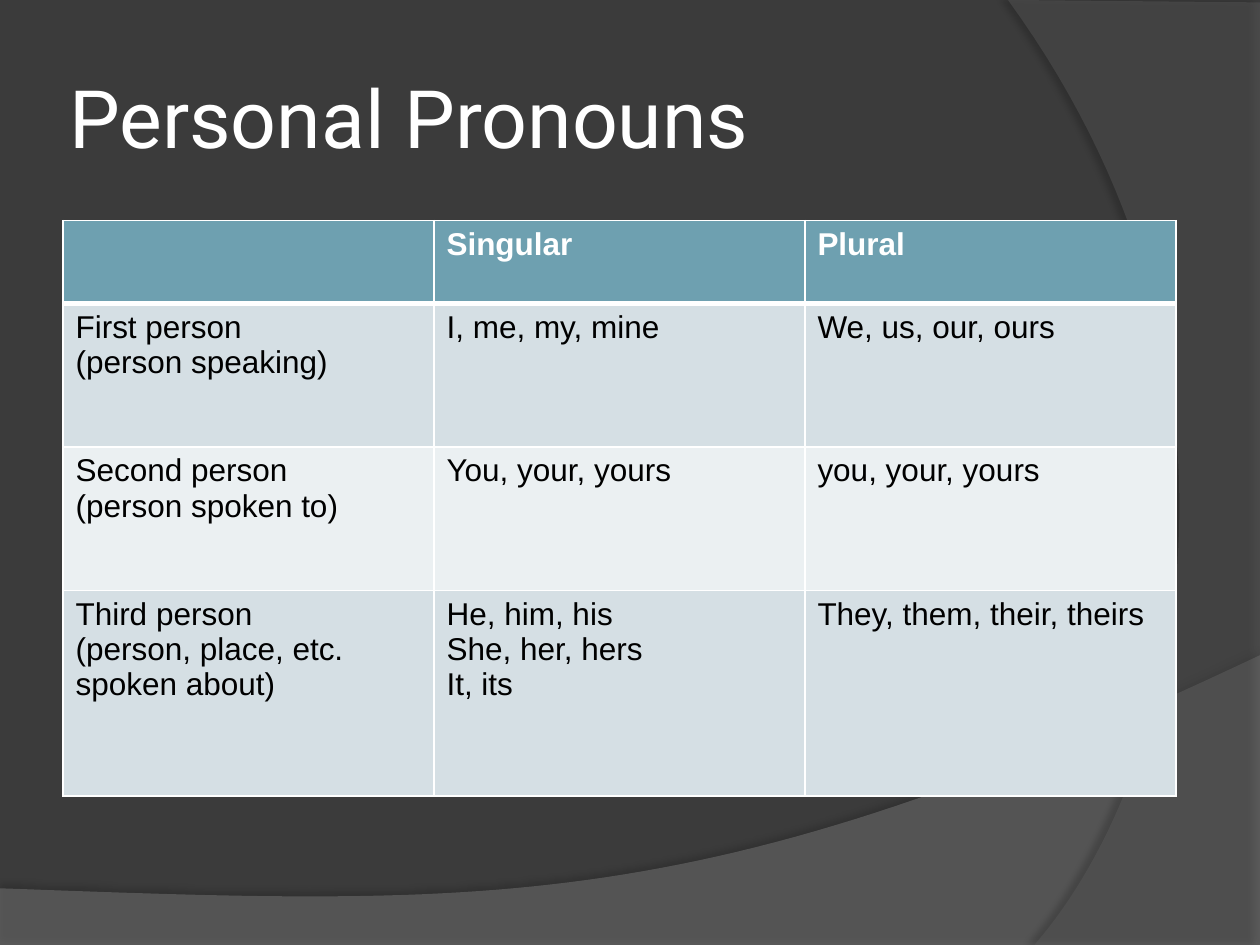
import lxml.etree
import pptx
import pptx.dml.color
import pptx.enum.text
import pptx.oxml.ns
import pptx.util

Pt = pptx.util.Pt
RGBColor = pptx.dml.color.RGBColor
qn = pptx.oxml.ns.qn

BACKGROUND = RGBColor(0x3B, 0x3B, 0x3B)
WAVE = RGBColor(0x7F, 0x7F, 0x7F)
ARC = RGBColor(0x5E, 0x5E, 0x5E)
WHITE = RGBColor(0xFF, 0xFF, 0xFF)
BLACK = RGBColor(0x00, 0x00, 0x00)
HEADER = RGBColor(0x6E, 0xA0, 0xB0)
BANDS = [RGBColor(0xEB, 0xF0, 0xF2), RGBColor(0xD5, 0xDF, 0xE4)]

PRONOUNS = [
    ["", "Singular", "Plural"],
    ["First person\n(person speaking)", "I, me, my, mine", "We, us, our, ours"],
    ["Second person\n(person spoken to)", "You, your, yours", "you, your, yours"],
    ["Third person\n(person, place, etc. spoken about)",
     "He, him, his\nShe, her, hers\nIt, its", "They, them, their, theirs"],
]


def sub(parent, tag, **attrs):
    return lxml.etree.SubElement(parent, qn(tag), {k: str(v) for k, v in attrs.items()})


def bezier(p0, p1, p2, p3, steps=60):
    points = []
    for i in range(steps + 1):
        t = i / steps
        weights = ((1 - t) ** 3, 3 * t * (1 - t) ** 2, 3 * t * t * (1 - t), t ** 3)
        points.append(tuple(sum(w * p[axis] for w, p in zip(weights, (p0, p1, p2, p3)))
                            for axis in (0, 1)))
    return points


class SlideBuilder:
    title_font = "Roboto"
    body_font = "Arial"

    def __init__(self, slide):
        self.slide = slide

    def background(self, color):
        fill = self.slide.background.fill
        fill.solid()
        fill.fore_color.rgb = color

    def swoosh(self, points, color, opacity, shadow_opacity, distance, angle):
        start, *rest = [(Pt(x), Pt(y)) for x, y in points]
        builder = self.slide.shapes.build_freeform(*start)
        builder.add_line_segments(rest, close=True)
        sp = builder.convert_to_shape()
        sp.fill.solid()
        sp.fill.fore_color.rgb = color
        sp.line.fill.background()
        sp.shadow.inherit = False
        sp_pr = sp.element.spPr
        sub(sp_pr.find(qn("a:solidFill"))[0], "a:alpha", val=opacity * 1000)
        shadow = sub(sp_pr.find(qn("a:effectLst")), "a:outerShdw", blurRad=Pt(4),
                     dist=Pt(distance), dir=angle * 60000, algn="ctr", rotWithShape=0)
        sub(sub(shadow, "a:srgbClr", val=BLACK), "a:alpha", val=shadow_opacity * 1000)

    def title(self, text, left, top, width, height):
        sp = self.slide.shapes.add_textbox(Pt(left), Pt(top), Pt(width), Pt(height))
        tf = sp.text_frame
        tf.word_wrap = True
        tf.vertical_anchor = pptx.enum.text.MSO_ANCHOR.MIDDLE
        tf.margin_left = tf.margin_right = tf.margin_top = tf.margin_bottom = Pt(3.6)
        tf.text = text
        self.style(tf, self.title_font, 46, WHITE)

    def style(self, tf, name, size, color, bold=False):
        for p in tf.paragraphs:
            p.font.name = name
            p.font.size = Pt(size)
            p.font.color.rgb = color
            p.font.bold = bold

    def cell(self, cell, text, fill, color, header):
        tc_pr = cell._tc.get_or_add_tcPr()
        for side in "LRTB":
            width = 3 if header and side == "B" else 1
            ln = sub(tc_pr, f"a:ln{side}", w=Pt(width))
            sub(sub(ln, "a:solidFill"), "a:srgbClr", val=WHITE)
        cell.fill.solid()
        cell.fill.fore_color.rgb = fill
        cell.text = text
        self.style(cell.text_frame, self.body_font, 18, color, header)

    def table(self, rows, left, top, col_width, row_heights):
        cols = len(rows[0])
        table = self.slide.shapes.add_table(
            len(rows), cols, Pt(left), Pt(top),
            Pt(col_width * cols), Pt(sum(row_heights))).table
        for col in table.columns:
            col.width = Pt(col_width)
        for i, (texts, height) in enumerate(zip(rows, row_heights)):
            table.rows[i].height = Pt(height)
            header = i == 0
            fill = HEADER if header else BANDS[i % 2]
            for j, text in enumerate(texts):
                self.cell(table.cell(i, j), text, fill, WHITE if header else BLACK, header)


def main():
    prs = pptx.Presentation()
    prs.slide_width, prs.slide_height = Pt(720), Pt(540)
    s = SlideBuilder(prs.slides.add_slide(prs.slide_layouts[6]))
    s.background(BACKGROUND)
    wave = bezier((720, 374.4), (402.5, 524.9), (281.5, 517.7), (0, 507.6))
    s.swoosh([(0, 540.7), (720, 540.7)] + wave, WAVE, 45, 35, 3.5, 270)
    arc = bezier((591.1, 540), (673.2, 445.7), (733, 216), (576, 0))
    s.swoosh([(720, 1.4), (720, 540)] + arc, ARC, 40, 45, 4, 180)
    s.title("Personal Pronouns", 36, 21.6, 588, 90)
    s.table(PRONOUNS, 36, 126, 212, [47.5, 82, 82, 117.5])
    prs.save("out.pptx")


if __name__ == "__main__":
    main()
